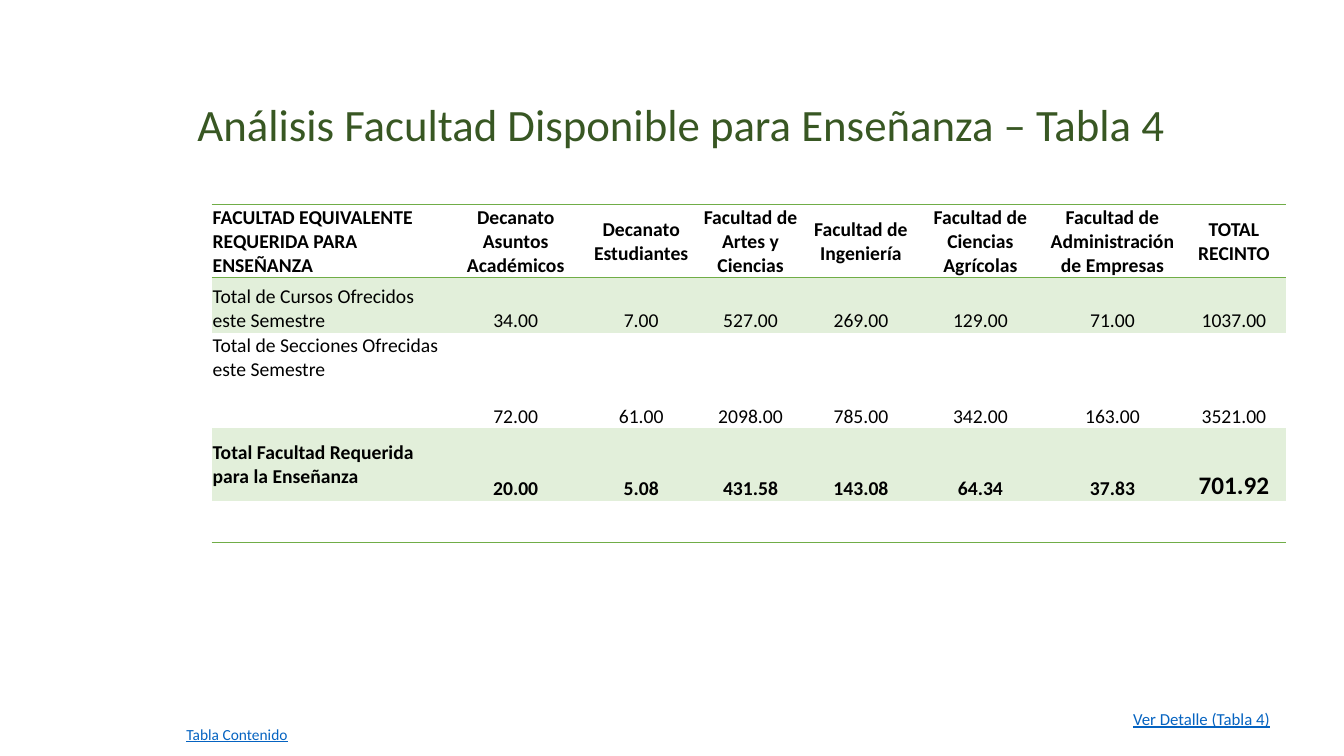
from lxml import etree
from pptx import Presentation
from pptx import util as u
from pptx.dml.color import RGBColor
from pptx.enum import text
from pptx.oxml import ns

FONT = "Calibri"
BLACK = RGBColor(0x00, 0x00, 0x00)
DARK_GREEN = RGBColor(0x38, 0x57, 0x23)
GREEN = RGBColor(0x70, 0xAD, 0x47)
PALE_GREEN = RGBColor(0xE2, 0xEF, 0xDA)
LINK_BLUE = RGBColor(0x05, 0x63, 0xC1)
PLAIN_TABLE_STYLE = "{2D5ABB26-0587-4C30-8999-92F81FD0307C}"

COLUMN_WIDTHS = [2.32, 1.39, 1.1, 1.07, 1.12, 1.25, 1.37, 1.04]
ROW_HEIGHTS = [0.7, 0.55, 0.95, 0.72, 0.41]
ROWS = [
    ["FACULTAD EQUIVALENTE REQUERIDA PARA ENSEÑANZA", "Decanato Asuntos Académicos",
     "Decanato Estudiantes", "Facultad de Artes y Ciencias", "Facultad de Ingeniería",
     "Facultad de Ciencias Agrícolas", "Facultad de Administración de Empresas",
     "TOTAL RECINTO"],
    ["Total de Cursos Ofrecidos este Semestre", "34.00", "7.00", "527.00", "269.00",
     "129.00", "71.00", "1037.00"],
    ["Total de Secciones Ofrecidas este Semestre", "72.00", "61.00", "2098.00", "785.00",
     "342.00", "163.00", "3521.00"],
    ["Total Facultad Requerida para la Enseñanza", "20.00", "5.08", "431.58", "143.08",
     "64.34", "37.83", "701.92"],
    [""] * len(COLUMN_WIDTHS),
]
HEADER, SECTIONS, REQUIRED, LAST = 0, 2, 3, 4
BANDED_ROWS = (1, 3)
TOP, MIDDLE, BOTTOM = (text.MSO_ANCHOR.TOP, text.MSO_ANCHOR.MIDDLE, text.MSO_ANCHOR.BOTTOM)
LABEL_ANCHORS = {SECTIONS: TOP, REQUIRED: MIDDLE}


def add_span(para, words, size, color, bold=False, underline=False):
    span = para.add_run()
    span.text = words
    font = span.font
    font.name, font.size, font.bold = FONT, u.Pt(size), bold
    font.underline = underline
    font.color.rgb = color


def add_label(page, left, top, width, height, words, size, color, underline=False):
    box = page.shapes.add_textbox(u.Inches(left), u.Inches(top),
                                  u.Inches(width), u.Inches(height))
    box.text_frame.word_wrap = False
    box.text_frame.auto_size = text.MSO_AUTO_SIZE.SHAPE_TO_FIT_TEXT
    add_span(box.text_frame.paragraphs[0], words, size, color, underline=underline)


def add_border(cell, side):
    line = etree.SubElement(cell._tc.get_or_add_tcPr(), ns.qn(f"a:ln{side}"),
                            w=str(u.Pt(1)))
    fill = etree.SubElement(line, ns.qn("a:solidFill"))
    etree.SubElement(fill, ns.qn("a:srgbClr"), val=str(GREEN))


def format_cell(cell, row, column):
    cell.margin_left = cell.margin_right = cell.margin_top = u.Inches(0.01)
    cell.margin_bottom = 0
    is_label = column == 0
    if is_label:
        cell.vertical_anchor = LABEL_ANCHORS.get(row, BOTTOM)
    else:
        cell.vertical_anchor = MIDDLE if row == HEADER else BOTTOM

    # Borders come before the fill in the cell properties
    if row == HEADER:
        add_border(cell, "T")
    if row in (HEADER, LAST):
        add_border(cell, "B")
    if row in BANDED_ROWS:
        cell.fill.solid()
        cell.fill.fore_color.rgb = PALE_GREEN
    else:
        cell.fill.background()

    words = ROWS[row][column]
    if words:
        para = cell.text_frame.paragraphs[0]
        para.alignment = text.PP_ALIGN.LEFT if is_label else text.PP_ALIGN.CENTER
        is_grand_total = row == REQUIRED and column == len(COLUMN_WIDTHS) - 1
        add_span(para, words, 18 if is_grand_total else 14, BLACK,
                 bold=row in (HEADER, REQUIRED))


def add_faculty_table(page, left, top):
    frame = page.shapes.add_table(len(ROWS), len(COLUMN_WIDTHS), u.Inches(left),
                                  u.Inches(top), u.Inches(sum(COLUMN_WIDTHS)),
                                  u.Inches(sum(ROW_HEIGHTS)))
    table = frame.table
    table.first_row = table.horz_banding = False
    table._tbl.tblPr.find(ns.qn("a:tableStyleId")).text = PLAIN_TABLE_STYLE
    for column, width in zip(table.columns, COLUMN_WIDTHS):
        column.width = u.Inches(width)
    for row, height in zip(table.rows, ROW_HEIGHTS):
        row.height = u.Inches(height)
    for row in range(len(ROWS)):
        for column in range(len(COLUMN_WIDTHS)):
            format_cell(table.cell(row, column), row, column)


def main():
    deck = Presentation()
    deck.slide_width, deck.slide_height = u.Inches(13.33), u.Inches(7.5)
    page = deck.slides.add_slide(deck.slide_layouts[6])

    # Faculty table
    add_faculty_table(page, 2.1, 2.03)

    # Title
    add_label(page, 1.86, 0.91, 9.91, 0.64,
              "Análisis Facultad Disponible para Enseñanza – Tabla 4", 32, DARK_GREEN)

    # Navigation labels
    add_label(page, 1.75, 7.14, 1.22, 0.29, "Tabla Contenido", 11, LINK_BLUE, True)
    add_label(page, 11.14, 6.98, 1.57, 0.3, "Ver Detalle (Tabla 4)", 12, LINK_BLUE, True)

    deck.save("out.pptx")


if __name__ == "__main__":
    main()
